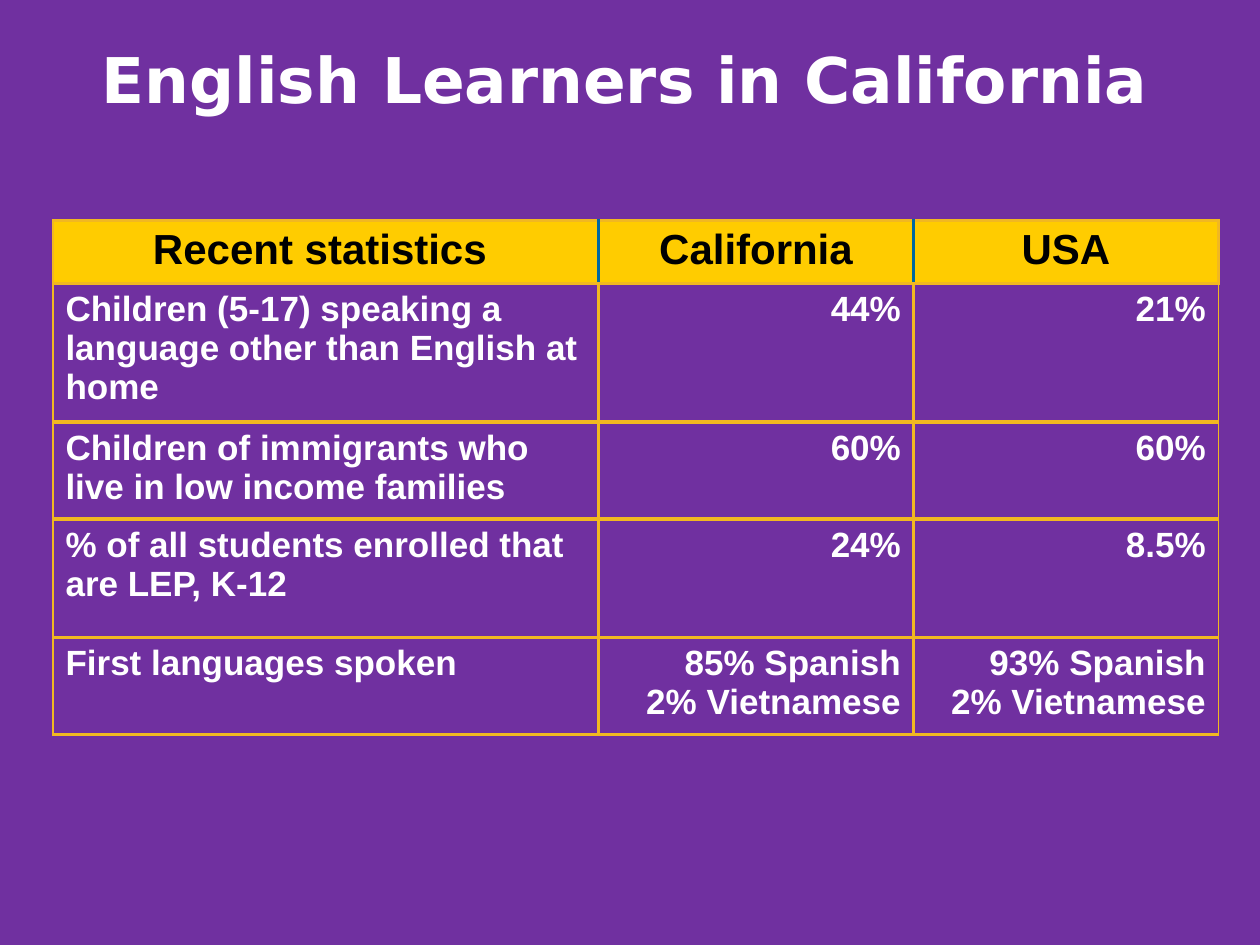
from lxml.etree import SubElement
from pptx import Presentation
from pptx.dml.color import RGBColor
from pptx.enum.text import MSO_ANCHOR, PP_ALIGN
from pptx.oxml.ns import qn
from pptx.util import Inches, Pt

COLORS = {
    "background": "7030A0",
    "header": "FFCC00",
    "header_text": "000000",
    "text": "FFFFFF",
    "grid": "F1B821",
    "header_divider": "0068A2",
}
COLUMN_WIDTHS = [4.33, 2.5, 2.42]
ROW_HEIGHTS = [0.5, 1.1, 0.77, 0.94, 0.77]
ROWS = [
    ["Recent statistics ", "California", "USA"],
    ["Children (5-17) speaking a language other than English at home", "44%", "21%"],
    ["Children of immigrants who live in low income families", "60%", "60%"],
    ["% of all students enrolled that are LEP, K-12", "24%", "8.5%"],
    ["First languages spoken", "85% Spanish\n2% Vietnamese", "93% Spanish\n2% Vietnamese"],
]


def rgb(name):
    return RGBColor.from_string(COLORS[name])


def format_text(text_frame, font_name, size, color, alignment):
    for paragraph in text_frame.paragraphs:
        paragraph.alignment = alignment
        for run in paragraph.runs:
            run.font.name = font_name
            run.font.size = Pt(size)
            run.font.bold = True
            run.font.color.rgb = rgb(color)


def add_title(slide, text):
    title = slide.shapes.title
    title.left, title.top = Inches(0.25), Inches(0)
    title.width, title.height = Inches(9.42), Inches(1.25)
    title.text_frame.text = text
    title.text_frame.vertical_anchor = MSO_ANCHOR.MIDDLE
    format_text(title.text_frame, "DejaVu Sans", 36, "text", PP_ALIGN.CENTER)


def set_border(cell, side, color, width):
    """Draw one cell edge; side is L, R, T or B, and calls must follow that order."""
    properties = cell._tc.get_or_add_tcPr()
    line = SubElement(properties, qn(f"a:ln{side}"), w=str(Pt(width)))
    fill = SubElement(line, qn("a:solidFill"))
    SubElement(fill, qn("a:srgbClr"), val=COLORS[color])


def set_cell_borders(cell, row, column):
    is_header = row == 0
    outer_width = 1.5 if is_header else 1
    divider = "header_divider" if is_header else "grid"
    for side, edge_column in (("L", 0), ("R", len(COLUMN_WIDTHS) - 1)):
        if column == edge_column:
            set_border(cell, side, "grid", outer_width)
        else:
            set_border(cell, side, divider, 2.25)
    set_border(cell, "T", "grid", 1.5 if is_header else 2.25)
    set_border(cell, "B", "grid", 2.25)


def format_cell(cell, row, column):
    set_cell_borders(cell, row, column)
    if row == 0:
        cell.fill.solid()
        cell.fill.fore_color.rgb = rgb("header")
        format_text(cell.text_frame, "Arial", 24, "header_text", PP_ALIGN.CENTER)
    else:
        cell.fill.background()
        alignment = PP_ALIGN.LEFT if column == 0 else PP_ALIGN.RIGHT
        format_text(cell.text_frame, "Arial", 20, "text", alignment)


def add_statistics_table(slide):
    table = slide.shapes.add_table(
        len(ROWS), len(COLUMN_WIDTHS), Inches(0.42), Inches(1.75),
        Inches(sum(COLUMN_WIDTHS)), Inches(sum(ROW_HEIGHTS)),
    ).table
    table.first_row = table.horz_banding = False
    for column, width in zip(table.columns, COLUMN_WIDTHS):
        column.width = Inches(width)
    for row, height in zip(table.rows, ROW_HEIGHTS):
        row.height = Inches(height)
    for row, texts in enumerate(ROWS):
        for column, text in enumerate(texts):
            cell = table.cell(row, column)
            cell.text_frame.text = text
            format_cell(cell, row, column)


def main():
    presentation = Presentation()
    presentation.slide_width, presentation.slide_height = Inches(10), Inches(7.5)
    slide = presentation.slides.add_slide(presentation.slide_layouts.get_by_name("Title Only"))
    slide.background.fill.solid()
    slide.background.fill.fore_color.rgb = rgb("background")
    add_title(slide, "English Learners in California")
    add_statistics_table(slide)
    presentation.save("out.pptx")


if __name__ == "__main__":
    main()
